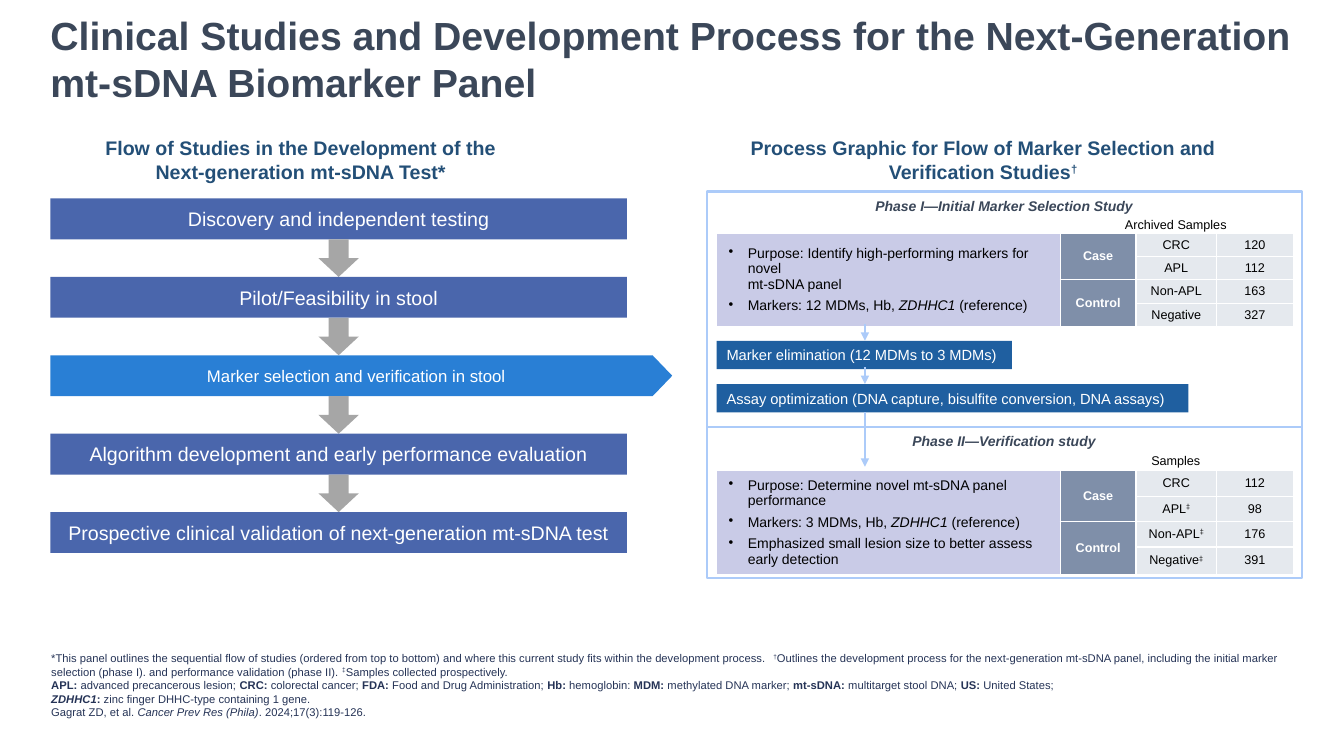
"""Build the slide on clinical studies behind the mt-sDNA biomarker panel."""
from dataclasses import dataclass
from lxml import etree
from pptx import Presentation
from pptx.dml.color import RGBColor
from pptx.enum.dml import MSO_FILL
from pptx.enum.shapes import MSO_CONNECTOR, MSO_SHAPE
from pptx.enum.text import MSO_ANCHOR, MSO_AUTO_SIZE, PP_ALIGN
from pptx.oxml.ns import qn
from pptx.util import Pt

LEFT, MID = PP_ALIGN.LEFT, PP_ALIGN.CENTER
CENTER, BOTTOM, TOP = MSO_ANCHOR.MIDDLE, MSO_ANCHOR.BOTTOM, MSO_ANCHOR.TOP
RECT, PLATE, ARROW = MSO_SHAPE.RECTANGLE, MSO_SHAPE.PENTAGON, MSO_SHAPE.DOWN_ARROW
FIXED = MSO_AUTO_SIZE.NONE

TITLE = "Clinical Studies and Development Process for the Next-Generation mt-sDNA Biomarker Panel"
HEADS = [
    ((36, 93.6, 357.8, 41), [[("Flow of Studies in the Development of the\nNext-generation mt-sDNA Test*", "")]]),
    ((480.2, 93.6, 444.2, 41), [[("Process Graphic for Flow of Marker Selection and", "")],
                                [("Verification Studies", ""), ("†", "^")]]),
]
STEPS = [
    "Discovery and independent testing",
    "Pilot/Feasibility in stool",
    "Marker selection and verification in stool",
    "Algorithm development and early performance evaluation",
    "Prospective clinical validation of next-generation mt-sDNA test",
]
FOCUS = 2
PHASES = [
    dict(top=140.4, rows=(14, 12, 16.4), frame=(136.8, 168.5),
         name="Phase I—Initial Marker Selection Study", label="Archived Samples",
         aims=[[("Purpose: Identify high-performing markers for novel\nmt-sDNA panel", "")],
               [("Markers: 12 MDMs, Hb, ", ""), ("ZDHHC1", "i"), (" (reference)", "")]],
         counts=[("CRC", "", 120), ("APL", "", 112), ("Non-APL", "", 163), ("Negative", "", 327)]),
    dict(top=308.2, rows=(14, 14, 18.2), frame=(305.3, 107.3),
         name="Phase II—Verification study", label="Samples",
         aims=[[("Purpose: Determine novel mt-sDNA panel\nperformance", "")],
               [("Markers: 3 MDMs, Hb, ", ""), ("ZDHHC1", "i"), (" (reference)", "")],
               [("Emphasized small lesion size to better assess\nearly detection", "")]],
         counts=[("CRC", "", 112), ("APL", "‡", 98), ("Non-APL", "‡", 176), ("Negative", "‡", 391)]),
]
GROUPS = ["Case", "Control"]
COLS = [245.5, 54, 57.6, 54.7]
TASKS = [(243.4, 211, "Marker elimination (12 MDMs to 3 MDMs)"),
         (274.3, 337, "Assay optimization (DNA capture, bisulfite conversion, DNA assays)")]
LINKS = [(231.1, 243.4), (262.1, 274.3), (294.5, 333.4)]
NOTES = [
    [("*This panel outlines the sequential flow of studies (ordered from top to bottom) and where this "
      "current study fits within the development process.  ", ""), ("†", "^"),
     ("Outlines the development process for the next-generation mt-sDNA panel, including the initial "
      "marker selection (phase I). and performance validation (phase II). ", ""), ("‡", "^"),
     ("Samples collected prospectively.", "")],
    [("APL: ", "b"), ("advanced precancerous lesion; ", ""), ("CRC: ", "b"), ("colorectal cancer; ", ""),
     ("FDA: ", "b"), ("Food and Drug Administration; ", ""), ("Hb: ", "b"), ("hemoglobin: ", ""),
     ("MDM: ", "b"), ("methylated DNA marker; ", ""), ("mt-sDNA: ", "b"),
     ("multitarget stool DNA; ", ""), ("US: ", "b"), ("United States;\n", ""),
     ("ZDHHC1", "bi"), (": ", "b"), ("zinc finger DHHC-type containing 1 gene.", "")],
    [("Gagrat ZD, et al. ", ""), ("Cancer Prev Res (Phila)", "i"), (". 2024;17(3):119-126.", "")],
]


@dataclass(frozen=True)
class Theme:
    """Hold the colours, font and type sizes of the slide."""
    font: str = "Arial"
    title: str = "3B4759"
    head: str = "234F77"
    note: str = "253356"
    bar: str = "4A66AC"
    focus: str = "297FD5"
    arrow: str = "A6A6A6"
    task: str = "1F5FA0"
    edge: str = "ACCBF9"
    aim: str = "C9CBE7"
    group: str = "7F8FA9"
    count: str = "E5E9EE"
    white: str = "FFFFFF"
    black: str = "000000"
    big: float = 28
    large: float = 14
    mid: float = 12
    small: float = 10.5
    body: float = 10
    cell: float = 9
    tiny: float = 8


LOOK = Theme()


def tint(hue):
    """Return a colour from its hex code."""
    return RGBColor.from_string(hue)


def write(frame, paras, size, hue, align=LEFT, bold=False, slant=False, dots=False, space=0):
    """Fill a text frame with styled paragraphs."""
    frame.word_wrap = True
    for num, parts in enumerate(paras):
        para = frame.add_paragraph() if num else frame.paragraphs[0]
        para.alignment = align
        para.space_before = para.space_after = Pt(space)
        if dots:
            props = para._p.get_or_add_pPr()
            props.set("marL", str(Pt(13.7)))
            props.set("indent", str(-Pt(13.7)))
            etree.SubElement(props, qn("a:buChar")).set("char", "•")
        font = para.font
        font.name, font.size, font.bold, font.italic = LOOK.font, Pt(size), bold, slant
        font.color.rgb = tint(hue)
        for text, style in parts:
            for line, piece in enumerate(text.split("\n")):
                if line:
                    para.add_line_break()
                if not piece:
                    continue
                run = para.add_run()
                run.text = piece
                if "b" in style:
                    run.font.bold = True
                if "i" in style:
                    run.font.italic = True
                if "^" in style:
                    run._r.get_or_add_rPr().set("baseline", "30000")


def add_box(slide, kind, area, fill=None, edge=None):
    """Add a flat shape with a fill or an outline."""
    box = slide.shapes.add_shape(kind, *map(Pt, area))
    box.shadow.inherit = False
    if fill:
        box.fill.solid()
        box.fill.fore_color.rgb = tint(fill)
    else:
        box.fill.background()
    if edge:
        box.line.color.rgb = tint(edge)
        box.line.width = Pt(1.5)
    else:
        box.line.fill.background()
    box.text_frame.vertical_anchor = CENTER
    return box


def add_text(slide, area, paras, anchor, **style):
    """Add a text box."""
    frame = slide.shapes.add_textbox(*map(Pt, area)).text_frame
    frame.vertical_anchor = anchor
    write(frame, paras, **style)


def add_link(slide, x, start, end):
    """Add a downward arrow line."""
    link = slide.shapes.add_connector(MSO_CONNECTOR.STRAIGHT, Pt(x), Pt(start), Pt(x), Pt(end))
    link.line.color.rgb = tint(LOOK.edge)
    link.line.width = Pt(1)
    etree.SubElement(link.line._get_or_add_ln(), qn("a:tailEnd")).set("type", "triangle")
    etree.SubElement(link._element.spPr, qn("a:effectLst"))


def set_cell(cell, paras, pads, fill=None, **style):
    """Fill one table cell."""
    cell.margin_left, cell.margin_right, cell.margin_top, cell.margin_bottom = map(Pt, pads)
    if fill:
        cell.fill.solid()
        cell.fill.fore_color.rgb = tint(fill)
    write(cell.text_frame, paras, **style)


def add_phase(slide, phase):
    """Add the table of one study phase."""
    first, second, rest = phase["rows"]
    highs = [first, second] + [rest] * 4
    area = (511.9, phase["top"], sum(COLS), sum(highs))
    table = slide.shapes.add_table(6, 4, *map(Pt, area)).table
    table.first_row = table.horz_banding = False
    for col, width in zip(table.columns, COLS):
        col.width = Pt(width)
    for row, high in zip(table.rows, highs):
        row.height = Pt(high)
        for cell in row.cells:
            cell.fill.background()
            cell.vertical_anchor = CENTER
            cell.margin_top = cell.margin_bottom = Pt(0.7)
            end = etree.SubElement(cell.text_frame.paragraphs[0]._p, qn("a:endParaRPr"))
            end.set("sz", str(LOOK.cell * 100))
    spans = [(0, 0, 0, 3), (1, 1, 1, 3), (2, 0, 5, 0), (2, 1, 3, 1), (4, 1, 5, 1)]
    for top, left, low, right in spans:
        table.cell(top, left).merge(table.cell(low, right))
    slim, even = (0, 1.4, 0.7, 0.7), (2.9,) * 4
    plain = dict(size=LOOK.cell, hue=LOOK.black, align=MID)
    set_cell(table.cell(0, 0), [[(phase["name"], "")]], slim, size=LOOK.body, hue=LOOK.title,
             align=MID, bold=True, slant=True, space=2)
    set_cell(table.cell(1, 1), [[(phase["label"], "")]], slim, **plain)
    set_cell(table.cell(2, 0), phase["aims"], (8.6, 2.9, 2.9, 2.9), LOOK.aim,
             size=LOOK.body, hue=LOOK.black, dots=True, space=2)
    for num, group in enumerate(GROUPS):
        set_cell(table.cell(2 + 2 * num, 1), [[(group, "")]], even, LOOK.group,
                 size=LOOK.cell, hue=LOOK.white, align=MID, bold=True)
    for row, (name, mark, count) in enumerate(phase["counts"], 2):
        set_cell(table.cell(row, 2), [[(name, ""), (mark, "^")]], even, LOOK.count, **plain)
        set_cell(table.cell(row, 3), [[(str(count), "")]], even, LOOK.count, **plain)


def add_flow(slide):
    """Add the bars and block arrows of the study flow."""
    left, top, width, high, pitch = 36, 141.8, 411.8, 29.2, 56
    for num, step in enumerate(STEPS):
        y, focus = top + num * pitch, num == FOCUS
        area = (left, y, 444.2 if focus else width, high)
        bar = add_box(slide, PLATE if focus else RECT, area, LOOK.focus if focus else LOOK.bar)
        if focus:
            bar.adjustments[0] = 0.48
        write(bar.text_frame, [[(step, "")]], LOOK.mid if focus else LOOK.large, LOOK.white, MID)
        if num < len(STEPS) - 1:
            add_box(slide, ARROW, (left + width / 2 - 14.4, y + high, 28.8, pitch - high), LOOK.arrow)


def main():
    """Build and save the slide."""
    deck = Presentation()
    deck.slide_width, deck.slide_height = Pt(960), Pt(540)
    slide = deck.slides.add_slide(deck.slide_layouts[5])
    title = slide.shapes.title
    title.left, title.top, title.width, title.height = map(Pt, (36, 5, 888, 70.6))
    frame = title.text_frame
    frame.auto_size, frame.vertical_anchor = FIXED, BOTTOM
    frame.margin_left = frame.margin_right = frame.margin_top = frame.margin_bottom = 0
    write(frame, [[(TITLE, "")]], LOOK.big, LOOK.title, bold=True)
    for area, paras in HEADS:
        add_text(slide, area, paras, TOP, size=LOOK.large, hue=LOOK.head, align=MID, bold=True)
    add_flow(slide)
    for phase in PHASES:
        add_phase(slide, phase)
        y, high = phase["frame"]
        add_box(slide, RECT, (504.7, y, 425.5, high), edge=LOOK.edge)
    for y, width, text in TASKS:
        task = add_box(slide, RECT, (511.9, y, width, 20.2), LOOK.task)
        write(task.text_frame, [[(text, "")]], LOOK.small, LOOK.white)
    for start, end in LINKS:
        add_link(slide, 617.8, start, end)
    add_text(slide, (29.5, 451.4, 894.2, 65.5), NOTES, BOTTOM, size=LOOK.tiny, hue=LOOK.note)
    deck.save("out.pptx")


if __name__ == "__main__":
    main()
